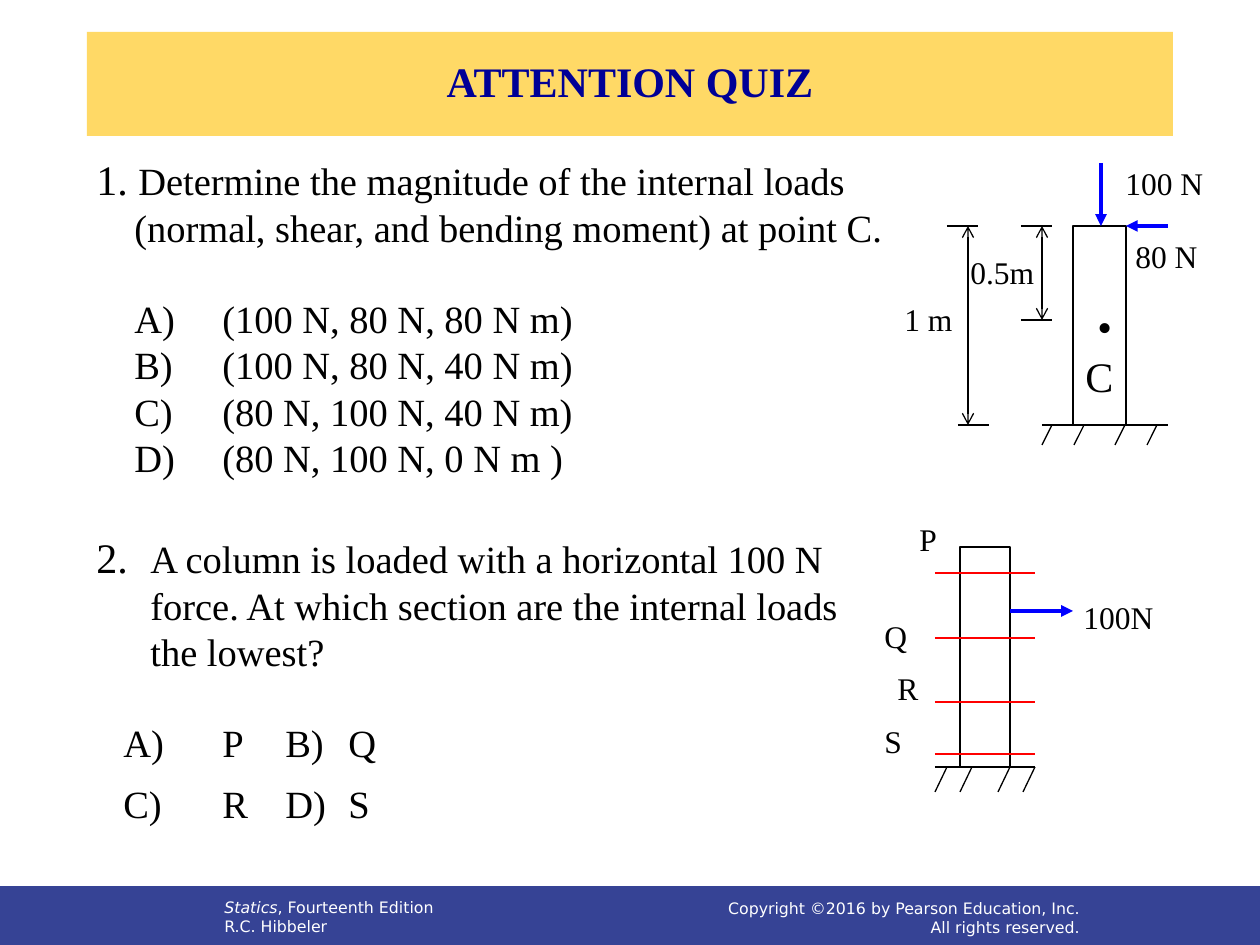
from pptx import Presentation
from pptx.util import Pt
from pptx.dml.color import RGBColor
from pptx.enum.shapes import MSO_SHAPE, MSO_CONNECTOR
from pptx.enum.text import MSO_ANCHOR, PP_ALIGN
from lxml.etree import SubElement
from pptx.oxml.ns import qn

SCALE = 914400 / 126
BLACK = RGBColor(0, 0, 0)
WHITE = RGBColor(255, 255, 255)
RED = RGBColor(255, 0, 0)
BLUE = RGBColor(0, 0, 255)
NAVY = RGBColor(0, 0, 0x96)
GOLD = RGBColor(0xFF, 0xD9, 0x66)
INDIGO = RGBColor(0x36, 0x43, 0x95)

SERIF = "Times New Roman"
BODY = {"name": SERIF, "size": Pt(22)}
LARGE = {"name": SERIF, "size": Pt(24)}
LABEL = {"name": SERIF, "size": Pt(18)}
TITLE = {"name": SERIF, "size": Pt(24), "bold": True}
FOOT = {"name": "DejaVu Sans", "size": Pt(9)}
SLANT = {**FOOT, "italic": True}


def px(n):
    return round(n * SCALE)


def put(item, values):
    for key, value in values.items():
        setattr(item, key, value)


def write(par, runs, color=BLACK, left=0, first=0, tabs=(), **form):
    props = par._p.get_or_add_pPr()
    props.set("marL", str(px(left)))
    props.set("indent", str(px(first)))
    put(par, form)
    if tabs:
        stops = SubElement(props, qn("a:tabLst"))
        for stop in tabs:
            SubElement(stops, qn("a:tab"), pos=str(px(stop)), algn="l")
    for text, style in runs:
        run = par.add_run()
        run.text = text
        put(run.font, style)
        run.font.color.rgb = color


def fill_text(frame, pars, color=BLACK, **form):
    put(frame, form)
    for i, (runs, values) in enumerate(pars):
        par = frame.add_paragraph() if i else frame.paragraphs[0]
        write(par, runs, color, **values)


def text(slide, box, pars, color=BLACK, wrap=True, **form):
    shape = slide.shapes.add_textbox(*map(px, box))
    fill_text(shape.text_frame, pars, color, word_wrap=wrap, **form)


def block(slide, box, fill=None, line=None):
    shape = slide.shapes.add_shape(MSO_SHAPE.RECTANGLE, *map(px, box))
    shape.shadow.inherit = False
    for part, color in ((shape.fill, fill), (shape.line.fill, line)):
        if color is None:
            part.background()
        else:
            part.solid()
            part.fore_color.rgb = color
    if line is not None:
        shape.line.width = Pt(0.75)
    return shape


def stroke(slide, ends, color=BLACK, width=0.75, **heads):
    line = slide.shapes.add_connector(MSO_CONNECTOR.STRAIGHT, *map(px, ends))
    line.line.color.rgb = color
    line.line.width = Pt(width)
    pen = line.line._get_or_add_ln()
    for end in ("headEnd", "tailEnd"):
        if end in heads:
            SubElement(pen, qn("a:" + end), type=heads[end])
    SubElement(line._element.spPr, qn("a:effectLst"))


def force(slide, ends):
    stroke(slide, ends, BLUE, 2.25, tailEnd="triangle")


def labels(slide, x, y, items):
    for word, dx, dy, wide in items:
        text(slide, (x + dx, y + dy, wide, 50), [([(word, LABEL)], {})],
             wrap=False)


def ground(slide, x, y, wide, marks, run, drop):
    stroke(slide, (x, y, x + wide, y))
    for dx in marks:
        stroke(slide, (x + dx, y, x + dx - run, y + drop))


def header(slide, box):
    shape = block(slide, box, GOLD)
    runs = [("ATTENTION QUIZ", TITLE)]
    form = {"alignment": PP_ALIGN.CENTER, "line_spacing": 0.9}
    fill_text(shape.text_frame, [(runs, form)], NAVY,
              vertical_anchor=MSO_ANCHOR.MIDDLE)


def footer(slide, box):
    x, y, wide, high = box
    block(slide, box, INDIGO, INDIGO)
    text(slide, (x + 212, y + 5, 376, 50), [
        ([("Statics", SLANT), (", Fourteenth Edition", FOOT)], {}),
        ([("R.C. Hibbeler", FOOT)], {}),
    ], WHITE)
    right = {"alignment": PP_ALIGN.RIGHT}
    notes = ("Copyright ©2016 by Pearson Education, Inc.",
             "All rights reserved.")
    text(slide, (x + 588, y + 4, 504, 54),
         [([(note, FOOT)], right) for note in notes], WHITE,
         vertical_anchor=MSO_ANCHOR.MIDDLE)


def loads(slide, box):
    pars = [
        ([("1. ", LARGE),
          ("Determine the magnitude of the internal loads", BODY)], {}),
        ([("(normal, shear, and bending moment) at point C.", BODY)],
         {"first": 38}),
    ]
    picks = ("A)\t(100 N, 80 N, 80 N m)", "B)\t(100 N, 80 N, 40 N m)",
             "C)\t(80 N, 100 N, 40 N m)", "D)\t(80 N, 100 N, 0 N m )")
    for i, pick in enumerate(picks):
        form = {"first": 38, "tabs": (115,), "space_before": Pt(0 if i else 26)}
        pars.append(([(pick, BODY)], form))
    text(slide, box, pars, wrap=False)


def lowest(slide, box):
    ask = ("A column is loaded with a horizontal 100 N force. "
           "At which section are the internal loads the lowest?")
    pars = [([("2.\t", LARGE), (ask, BODY)], {"left": 54, "first": -54})]
    for pick, gap in (("A)\tP\tB)\tQ", 26), ("C)\tR\tD)\tS", 8)):
        form = {"first": 27, "tabs": (96, 445, 502), "space_before": Pt(gap)}
        pars.append(([(pick, BODY)], form))
    text(slide, box, pars)


def post(slide, x, y):
    top, mid, base = y + 76, y + 170, y + 275
    shape = block(slide, (x + 183, top, 53, base - top), line=BLACK)
    center = {"alignment": PP_ALIGN.CENTER}
    fill_text(shape.text_frame,
              [([(word, LARGE)], center) for word in (" •", " C ")],
              word_wrap=False, vertical_anchor=MSO_ANCHOR.MIDDLE,
              margin_top=px(56), margin_bottom=px(6))
    ground(slide, x + 152, base, 126, (10, 42, 83, 115), 10, 20)
    for dx, level in ((131, top), (57, top), (68, base), (131, mid)):
        stroke(slide, (x + dx, level, x + dx + 31, level))
    for dx, end in ((78, base), (152, mid)):
        stroke(slide, (x + dx, top, x + dx, end),
               headEnd="arrow", tailEnd="arrow")
    force(slide, (x + 278, top, x + 236, top))
    force(slide, (x + 211, y + 13, x + 211, top))
    labels(slide, x, y, (("0.5m", 68, 97, 89), ("1 m", 2, 144, 73),
                         ("80 N", 233, 81, 87), ("100 N", 223, 8, 103)))


def column(slide, x, y):
    block(slide, (x + 90, y + 37, 50, 220), line=BLACK)
    for dy in (63, 128, 192, 244):
        stroke(slide, (x + 65, y + dy, x + 165, y + dy), RED)
    ground(slide, x + 65, y + 257, 100, (12, 37, 75, 100), 12, 25)
    force(slide, (x + 140, y + 101, x + 203, y + 101))
    labels(slide, x, y, (("P", 37, 4, 43), ("Q", 2, 101, 48),
                         ("R", 15, 153, 47), ("S", 2, 206, 43),
                         ("100N", 201, 82, 96)))


def main():
    deck = Presentation()
    put(deck, {"slide_width": px(1260), "slide_height": px(945)})
    slide = deck.slides.add_slide(deck.slide_layouts[6])
    footer(slide, (0, 887, 1260, 58))
    lowest(slide, (84, 525, 800, 333))
    column(slide, 870, 510)
    loads(slide, (84, 147, 815, 340))
    post(slide, 890, 150)
    header(slide, (87, 32, 1086, 104))
    deck.save("out.pptx")


if __name__ == "__main__":
    main()
